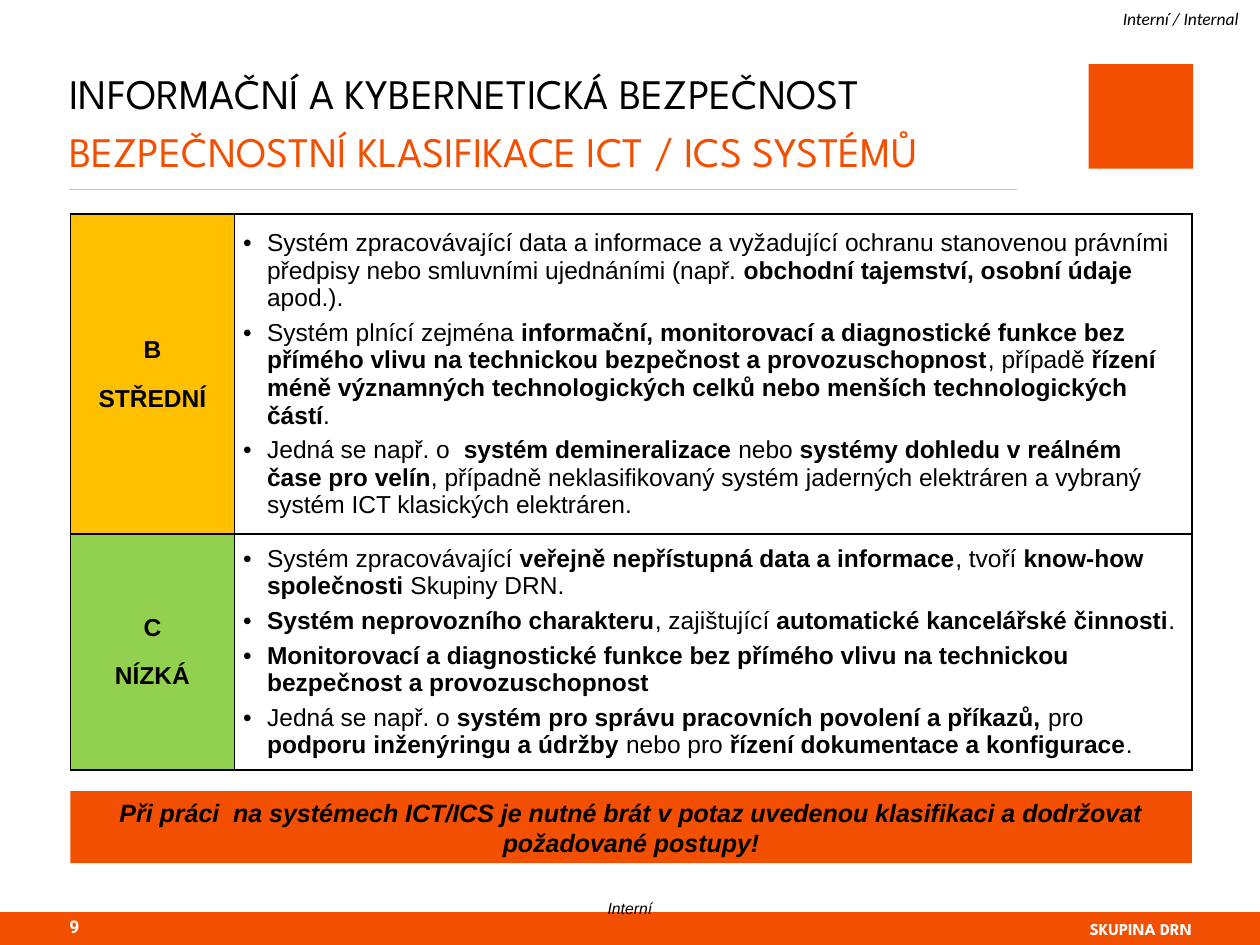
from lxml.etree import SubElement
from pptx import Presentation
from pptx.dml.color import RGBColor
from pptx.enum.shapes import MSO_CONNECTOR, MSO_SHAPE
from pptx.enum.text import MSO_ANCHOR, PP_ALIGN
from pptx.oxml.ns import qn
from pptx.util import Inches, Pt

COLORS = {
    "black": "000000", "white": "FFFFFF", "orange": "F24F00",
    "amber": "FFC000", "green": "92D050", "gray": "C8C8C8",
}
LEFT, WIDE = 0.56, 8.9
NO_PAD = {f"margin_{side}": 0 for side in ("left", "top", "right", "bottom")}


def color(name):
    return RGBColor.from_string(COLORS[name])


def write(par, text, font, tint="black"):
    """Add text to a paragraph; parts between ** marks are bold."""
    for i, part in enumerate(text.split("**")):
        if part:
            run = par.add_run()
            run.text = part
            for key, value in font.items():
                setattr(run.font, key, value)
            if i % 2:
                run.font.bold = True
            run.font.color.rgb = color(tint)


deck = Presentation()
deck.slide_width, deck.slide_height = Inches(10), Inches(7.5)
slide = deck.slides.add_slide(deck.slide_layouts[5])
shapes = slide.shapes

# Orange blocks: emblem, footer band, banner
blocks = []
for box in ((8.64, 0.51, 0.83, 0.83), (0, 7.24, 10, 0.26), (LEFT, 6.28, WIDE, 0.57)):
    block = shapes.add_shape(MSO_SHAPE.RECTANGLE, *map(Inches, box))
    block.shadow.inherit = False
    block.fill.solid()
    block.fill.fore_color.rgb = color("orange")
    block.line.fill.background()
    blocks.append(block)
banner = blocks[-1].text_frame
banner.word_wrap = True
banner.vertical_anchor = MSO_ANCHOR.MIDDLE
par = banner.paragraphs[0]
par.alignment = PP_ALIGN.CENTER
write(par, "Při práci  na systémech ICT/ICS je nutné brát v potaz uvedenou "
      "klasifikaci a dodržovat požadované postupy!",
      {"name": "Arial", "size": Pt(14.3), "bold": True, "italic": True})

# Title and its rule
title = shapes.title
title.left, title.top, title.width, title.height = map(Inches, (0.55, 0.48, 7.52, 0.89))
frame = title.text_frame
for key, value in {**NO_PAD, "word_wrap": True, "vertical_anchor": MSO_ANCHOR.TOP}.items():
    setattr(frame, key, value)
par = frame.paragraphs[0]
par.alignment = PP_ALIGN.LEFT
par.line_spacing = Pt(33)
font = {"name": "League Spartan", "size": Pt(24)}
write(par, "INFORMAČNÍ A KYBERNETICKÁ BEZPEČNOST", font)
par.add_line_break()
write(par, "BEZPEČNOSTNÍ KLASIFIKACE ICT / ICS SYSTÉMŮ", font, "orange")

rule = shapes.add_connector(MSO_CONNECTOR.STRAIGHT, *map(Inches, (0.55, 1.5, 8.07, 1.5)))
rule.line.color.rgb = color("gray")
rule.line.width = Pt(0.5)
SubElement(rule._element.spPr, qn("a:effectLst"))

# Small labels
labels = [
    ("Interní / Internal", (8.58, 0, 1.25, 0.29), PP_ALIGN.RIGHT, "black",
     {"name": "Calibri", "size": Pt(10), "italic": True}),
    ("Interní", (4.75, 7.12, 0.5, 0.17), PP_ALIGN.CENTER, "black",
     {"name": "Arial", "size": Pt(9), "italic": True}),
    ("9", (0.55, 7.27, 0.34, 0.17), PP_ALIGN.LEFT, "white",
     {"name": "Roboto", "size": Pt(10), "bold": True}),
    ("SKUPINA DRN", (8.26, 7.28, 1.2, 0.18), PP_ALIGN.RIGHT, "white",
     {"name": "League Spartan", "size": Pt(9.5), "bold": True}),
]
for text, box, align, tint, font in labels:
    frame = shapes.add_textbox(*map(Inches, box)).text_frame
    for key, value in {**NO_PAD, "word_wrap": True,
                       "vertical_anchor": MSO_ANCHOR.MIDDLE}.items():
        setattr(frame, key, value)
    par = frame.paragraphs[0]
    par.alignment = align
    write(par, text, font, tint)

# Table of system classes
levels = [
    (2.54, "amber", ["**B**", "**STŘEDNÍ**"], [
        "Systém zpracovávající data a informace a vyžadující ochranu stanovenou právními "
        "předpisy nebo smluvními ujednáními (např. **obchodní tajemství, osobní údaje **apod.).",
        "Systém plnící zejména **informační, monitorovací a diagnostické funkce bez přímého "
        "vlivu na technickou bezpečnost a provozuschopnost**, případě **řízení méně významných "
        "technologických celků nebo menších technologických částí**.",
        "Jedná se např. o  **systém demineralizace **nebo** systémy dohledu v reálném čase "
        "pro velín**, případně neklasifikovaný systém jaderných elektráren a vybraný systém "
        "ICT klasických elektráren.",
    ]),
    (1.87, "green", ["**C**", "**NÍZKÁ**"], [
        "Systém zpracovávající **veřejně nepřístupná data a informace**, tvoří **know-how "
        "společnosti **Skupiny DRN.",
        "**Systém neprovozního charakteru**, zajištující **automatické kancelářské činnosti**.",
        "**Monitorovací a diagnostické funkce bez přímého vlivu na technickou bezpečnost "
        "a provozuschopnost**",
        "Jedná se např. o **systém pro správu pracovních povolení a příkazů, **pro** podporu "
        "inženýringu a údržby **nebo pro** řízení dokumentace a konfigurace**.",
    ]),
]
table = shapes.add_table(2, 2, *map(Inches, (LEFT, 1.7, WIDE, 4.41))).table
table.first_row = table.horz_banding = False
for col, width in zip(table.columns, (1.3, 7.6)):
    col.width = Inches(width)
font = {"name": "Arial", "size": Pt(14), "bold": False}
pads = {**NO_PAD, "margin_left": Inches(0.07), "margin_right": Inches(0.07),
        "vertical_anchor": MSO_ANCHOR.MIDDLE}

for r, (height, tint, *texts) in enumerate(levels):
    table.rows[r].height = Inches(height)
    for c, lines in enumerate(texts):
        cell = table.cell(r, c)
        for key, value in pads.items():
            setattr(cell, key, value)
        props = cell._tc.get_or_add_tcPr()
        for side in "LRTB":
            edge = SubElement(props, qn(f"a:ln{side}"), w=str(Pt(1)))
            paint = SubElement(edge, qn("a:solidFill"))
            SubElement(paint, qn("a:srgbClr"), val=COLORS["black"])
        if c == 0:
            cell.fill.solid()
            cell.fill.fore_color.rgb = color(tint)
        else:
            cell.fill.background()
        frame = cell.text_frame
        for i, line in enumerate(lines):
            par = frame.add_paragraph() if i else frame.paragraphs[0]
            par.alignment = PP_ALIGN.LEFT if c else PP_ALIGN.CENTER
            par.space_before = par.space_after = Pt(2 if c else 6)
            write(par, line, font)
            if c:
                form = par._p.get_or_add_pPr()
                form.set("marL", str(Inches(0.19)))
                form.set("indent", str(Inches(-0.19)))
                SubElement(form, qn("a:buFont"), typeface="Arial")
                SubElement(form, qn("a:buChar"), char="•")

deck.save("out.pptx")
